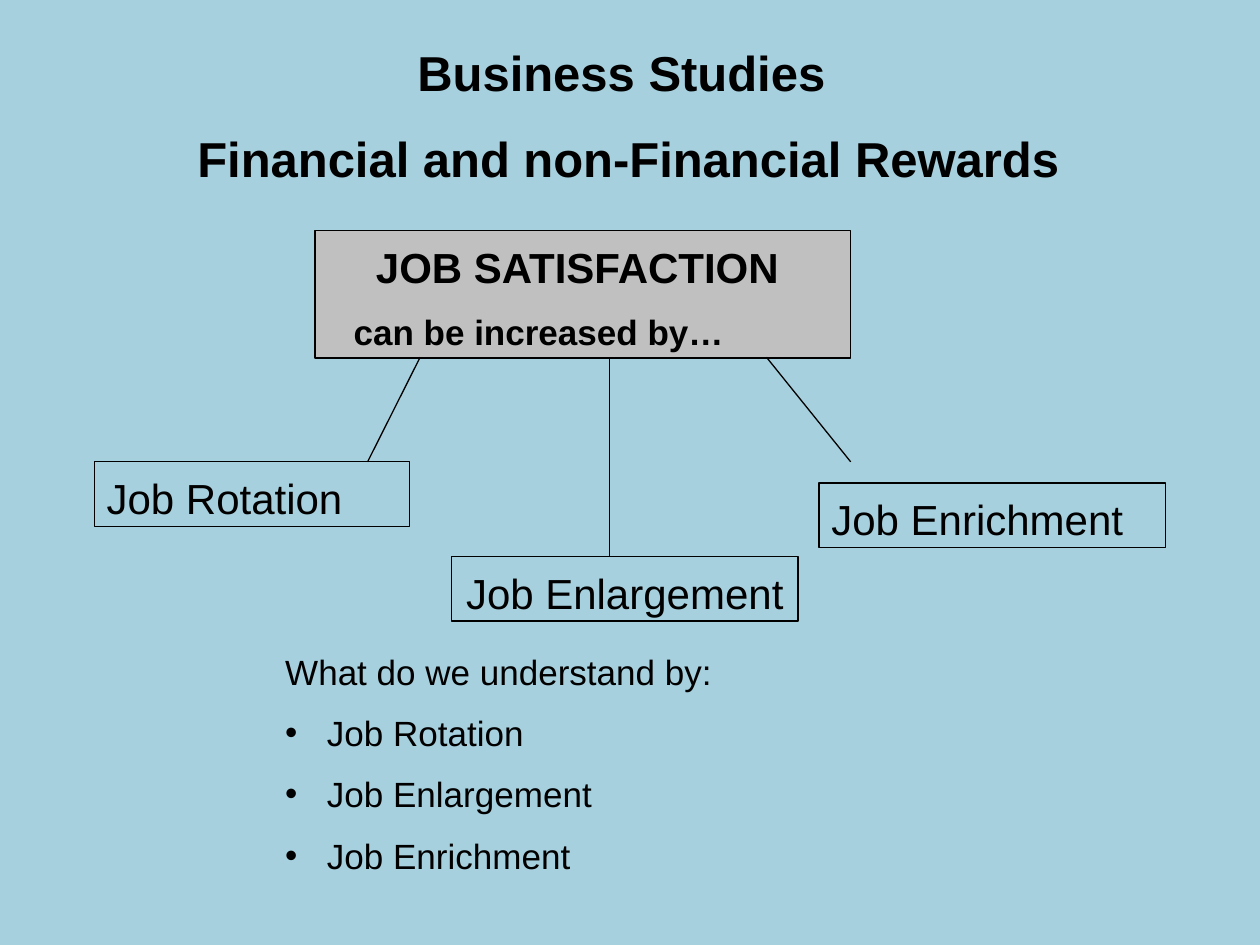
import pptx
import pptx.util
import pptx.dml.color
import pptx.enum.shapes
import pptx.enum.text
from pptx.oxml.xmlchemy import OxmlElement

Cm, Pt = pptx.util.Cm, pptx.util.Pt
ALIGN = pptx.enum.text.PP_ALIGN
BLACK, GREY, SKY = "000000", "C0C0C0", "A6D0DE"

# Content: paragraphs are (text, format)
HEADING = {"size": 28, "bold": True, "align": ALIGN.CENTER}
TITLE = [("Business Studies", HEADING),
         ("Financial and non-Financial Rewards", {**HEADING, "left": 0.28})]
QUESTIONS = [("What do we understand by:", {"size": 20})] + [
    (name, {"size": 20, "left": 0.84, "bullet": "•"})
    for name in ("Job Rotation", "Job Enlargement", "Job Enrichment")]

# Boxes: left, top, width, height in cm, fill, paragraphs
BOXES = [
    (6.35, 4.65, 10.8, 2.57, GREY, [
        ("JOB SATISFACTION", {"size": 24, "bold": True, "left": 0.98}),
        ("can be increased by…", {"size": 20, "bold": True, "left": 0.53})]),
    (1.9, 9.31, 6.35, 1.3, None, [("Job Rotation", {"size": 24})]),
    (9.1, 11.22, 6.99, 1.3, None,
     [("Job Enlargement", {"size": 24, "align": ALIGN.CENTER})]),
    (16.51, 9.74, 6.99, 1.3, None, [("Job Enrichment", {"size": 24})]),
]
# Branches: x at the top box, then x and y of the lower end
BRANCH_TOP = 7.2
BRANCHES = [(8.47, 7.41, 9.31), (12.28, 12.28, 11.22), (15.45, 17.15, 9.31)]


def rgb(value):
    return pptx.dml.color.RGBColor.from_string(value)


def outline(shape):
    shape.line.color.rgb = rgb(BLACK)
    shape.line.width = Pt(0.75)


def write(shape, paragraphs, right=0.25):
    tf = shape.text_frame
    frame = {"word_wrap": True, "auto_size": pptx.enum.text.MSO_AUTO_SIZE.NONE,
             "vertical_anchor": pptx.enum.text.MSO_ANCHOR.TOP,
             "margin_left": Cm(0.25), "margin_right": Cm(right),
             "margin_top": Pt(3.6 + 0.1 * paragraphs[0][1]["size"]),
             "margin_bottom": 0}
    for name, value in frame.items():
        setattr(tf, name, value)
    for i, (text, fmt) in enumerate(paragraphs):
        p = tf.add_paragraph() if i else tf.paragraphs[0]
        p.alignment = fmt.get("align", ALIGN.LEFT)
        p.line_spacing = 1.0
        p.space_before = Pt(0.55 * fmt["size"] if i else 0)
        p.space_after = Pt(0)
        r = p.add_run()
        r.text = text
        font = {"name": "Arial", "size": Pt(fmt["size"]), "bold": fmt.get("bold", False)}
        for name, value in font.items():
            setattr(r.font, name, value)
        r.font.color.rgb = rgb(BLACK)
        # Indents and bullets
        bullet = fmt.get("bullet")
        left = Cm(fmt.get("left", 0))
        pPr = p._p.get_or_add_pPr()
        pPr.set("marL", str(left))
        pPr.set("indent", str(-left if bullet else 0))
        mark = OxmlElement("a:buChar" if bullet else "a:buNone")
        if bullet:
            mark.set("char", bullet)
        pPr.append(mark)


def place(shape, left, top, width, height):
    shape.left, shape.top = Cm(left), Cm(top)
    shape.width, shape.height = Cm(width), Cm(height)


prs = pptx.Presentation()
prs.slide_width, prs.slide_height = Cm(25.4), Cm(19.05)
s = prs.slides.add_slide(prs.slide_layouts[1])
s.background.fill.solid()
s.background.fill.fore_color.rgb = rgb(SKY)

# Title and question list
place(s.shapes.title, 2.54, 0.64, 20.53, 3.22)
write(s.shapes.title, TITLE, right=0.81)
body = s.placeholders[1]
place(body, 5.5, 12.91, 13.12, 4.9)
write(body, QUESTIONS)

# Boxes of the diagram
for left, top, width, height, fill, paragraphs in BOXES:
    sp = s.shapes.add_shape(pptx.enum.shapes.MSO_SHAPE.RECTANGLE,
                            Cm(left), Cm(top), Cm(width), Cm(height))
    sp.shadow.inherit = False
    if fill:
        sp.fill.solid()
        sp.fill.fore_color.rgb = rgb(fill)
    else:
        sp.fill.background()
    outline(sp)
    write(sp, paragraphs)

# Branches
for x_top, x_end, y_end in BRANCHES:
    line = s.shapes.add_connector(pptx.enum.shapes.MSO_CONNECTOR.STRAIGHT,
                                  Cm(x_end), Cm(y_end), Cm(x_top), Cm(BRANCH_TOP))
    outline(line)
    line._element.spPr.append(OxmlElement("a:effectLst"))

prs.save("out.pptx")
